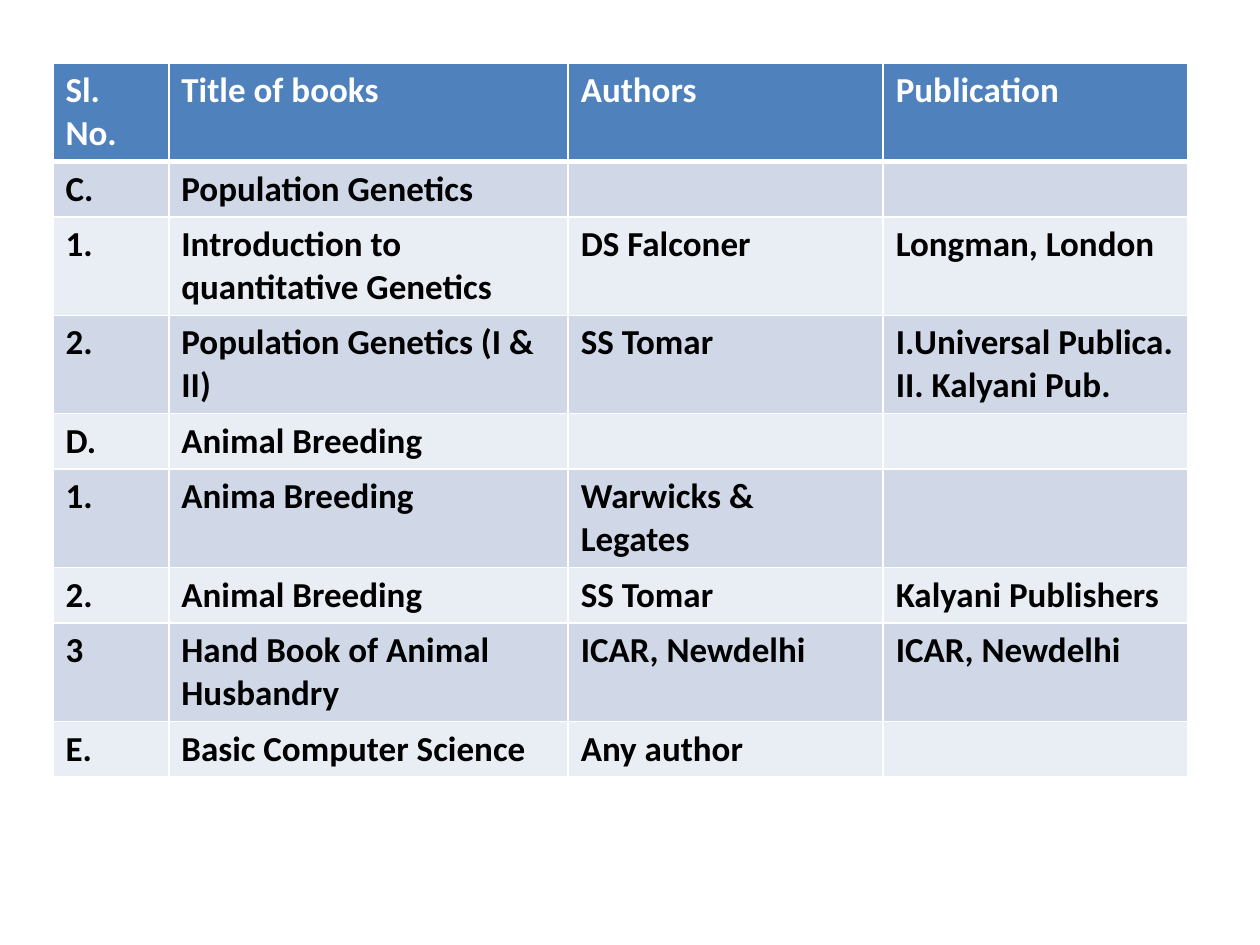
import lxml.etree
import pptx
import pptx.dml.color
import pptx.oxml
import pptx.oxml.ns
import pptx.util

COLORS = {
    "header": "4F81BD",
    "odd": "D0D8E8",
    "even": "E9EDF4",
    "border": "FFFFFF",
    "header_text": "FFFFFF",
    "body_text": "000000",
}

COLUMN_WIDTHS = [0.92, 3.17, 2.5, 2.42]
ROW_HEIGHT = 0.41

BOOKS = [
    ["Sl. No.", "Title of books", "Authors", "Publication"],
    ["C.", "Population Genetics", "", ""],
    ["1.", "Introduction to quantitative Genetics", "DS Falconer", "Longman, London"],
    ["2.", "Population Genetics (I & II)", "SS Tomar", "I.Universal Publica.\nII. Kalyani Pub."],
    ["D.", "Animal Breeding", "", ""],
    ["1.", "Anima Breeding", "Warwicks & Legates", ""],
    ["2.", "Animal Breeding", "SS Tomar", "Kalyani Publishers"],
    ["3", "Hand Book of Animal Husbandry", "ICAR, Newdelhi", "ICAR, Newdelhi"],
    ["E.", "Basic Computer Science", "Any author", ""],
]


def rgb(name):
    return pptx.dml.color.RGBColor.from_string(COLORS[name])


class BookSlide:
    font_format = {"name": "Calibri", "size": pptx.util.Pt(20), "bold": True}

    def __init__(self, deck):
        self.slide = deck.slides.add_slide(deck.slide_layouts[6])

    def add_borders(self, cell, widths):
        properties = cell._tc.get_or_add_tcPr()
        for side, width in widths.items():
            line = lxml.etree.SubElement(
                properties,
                pptx.oxml.ns.qn(f"a:ln{side}"),
                w=str(pptx.util.Pt(width)),
            )
            solid = lxml.etree.SubElement(line, pptx.oxml.ns.qn("a:solidFill"))
            lxml.etree.SubElement(
                solid, pptx.oxml.ns.qn("a:srgbClr"), val=COLORS["border"]
            )

    def add_cell(self, cell, text, fill, text_color, borders):
        self.add_borders(cell, borders)
        cell.fill.solid()
        cell.fill.fore_color.rgb = rgb(fill)
        if not text:
            return
        cell.text = text
        for paragraph in cell.text_frame.paragraphs:
            for attribute, value in self.font_format.items():
                setattr(paragraph.font, attribute, value)
            paragraph.font.color.rgb = rgb(text_color)

    def add_table(self, rows, left, top):
        book_table = self.slide.shapes.add_table(
            len(rows),
            len(COLUMN_WIDTHS),
            pptx.util.Inches(left),
            pptx.util.Inches(top),
            pptx.util.Inches(sum(COLUMN_WIDTHS)),
            pptx.util.Inches(ROW_HEIGHT * len(rows)),
        ).table
        for column, width in zip(book_table.columns, COLUMN_WIDTHS):
            column.width = pptx.util.Inches(width)
        for row_number, entries in enumerate(rows):
            book_table.rows[row_number].height = pptx.util.Inches(ROW_HEIGHT)
            is_header = row_number == 0
            fill = "header" if is_header else ("even", "odd")[row_number % 2]
            text_color = "header_text" if is_header else "body_text"
            borders = {
                "L": 1,
                "R": 1,
                "T": 3 if row_number == 1 else 1,
                "B": 3 if is_header else 1,
            }
            for column_number, text in enumerate(entries):
                cell = book_table.cell(row_number, column_number)
                self.add_cell(cell, text, fill, text_color, borders)


def main():
    deck = pptx.Presentation()
    deck.slide_width = pptx.util.Inches(10)
    deck.slide_height = pptx.util.Inches(7.5)
    BookSlide(deck).add_table(BOOKS, left=0.42, top=0.5)
    deck.save("out.pptx")


if __name__ == "__main__":
    main()
